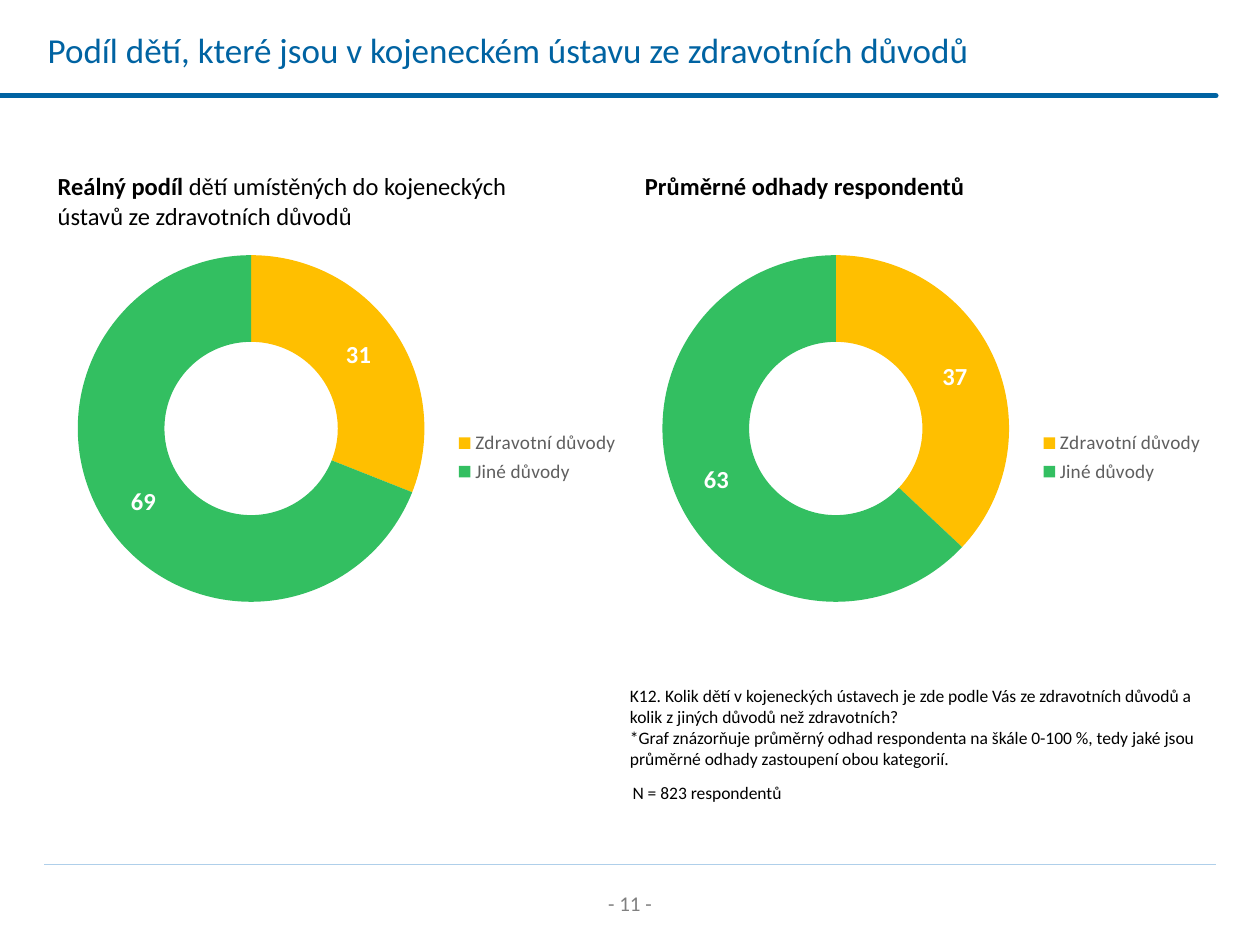
"""Build a slide comparing the real and estimated share of children placed for health reasons."""
from lxml.etree import SubElement
from pptx import Presentation
from pptx.chart.data import CategoryChartData
from pptx.dml.color import RGBColor
from pptx.enum.chart import XL_CHART_TYPE, XL_LEGEND_POSITION
from pptx.enum.shapes import MSO_CONNECTOR
from pptx.enum.text import MSO_ANCHOR, PP_ALIGN
from pptx.oxml import parse_xml
from pptx.oxml.ns import nsdecls, qn
from pptx.util import Inches, Pt

BLUE = "0063A2"
BLACK = "000000"
REASONS = {"Zdravotní důvody": "FFBF00", "Jiné důvody": "33BF61"}


def colour(value):
    return RGBColor.from_string(value)


def manual_layout(left, top, width, height, inner=False):
    target = '<c:layoutTarget val="inner"/>' if inner else ""
    return parse_xml(
        f'<c:layout {nsdecls("c")}><c:manualLayout>{target}'
        '<c:xMode val="edge"/><c:yMode val="edge"/>'
        f'<c:x val="{left}"/><c:y val="{top}"/><c:w val="{width}"/><c:h val="{height}"/>'
        "</c:manualLayout></c:layout>"
    )


class SlideBuilder:
    def __init__(self, page, family="Calibri"):
        self.page = page
        self.family = family

    def style(self, font, size, ink, bold=False):
        font.name = self.family
        font.size = Pt(size)
        font.bold = bold
        font.color.rgb = colour(ink)

    def line(self, left, right, top, ink, weight, cap="flat"):
        rule = self.page.shapes.add_connector(
            MSO_CONNECTOR.STRAIGHT, Inches(left), Inches(top), Inches(right), Inches(top)
        )
        rule.line.color.rgb = colour(ink)
        rule.line.width = Pt(weight)
        properties = rule.line._get_or_add_ln()
        properties.set("cap", cap)
        SubElement(properties.getparent(), qn("a:effectLst"))

    def text(self, bounds, paragraphs, size, ink=BLACK, inset=0.1,
             align=PP_ALIGN.LEFT, anchor=MSO_ANCHOR.TOP):
        box = self.page.shapes.add_textbox(*map(Inches, bounds))
        frame = box.text_frame
        frame.word_wrap = True
        frame.margin_left = Inches(inset)
        frame.vertical_anchor = anchor
        for index, runs in enumerate(paragraphs):
            para = frame.add_paragraph() if index else frame.paragraphs[0]
            para.alignment = align
            for words, bold in runs:
                span = para.add_run()
                span.text = words
                self.style(span.font, size, ink, bold)

    def doughnut(self, bounds, values):
        data = CategoryChartData(number_format="#,##0")
        data.categories = list(REASONS)
        data.add_series("Podíl", values)
        chart = self.page.shapes.add_chart(
            XL_CHART_TYPE.DOUGHNUT, *map(Inches, bounds), data
        ).chart
        self.style(chart.font, 18, BLACK)
        chart.has_title = False
        chart.has_legend = True
        legend = chart.legend
        legend.position = XL_LEGEND_POSITION.RIGHT
        legend.include_in_layout = False
        self.style(legend.font, 11, "5F5F5F")
        legend._element.find(qn("c:legendPos")).addnext(manual_layout(0.66, 0.14, 0.34, 0.58))

        plot_area = chart._chartSpace.chart.plotArea
        for layout in plot_area.findall(qn("c:layout")):
            plot_area.remove(layout)
        plot_area.insert(0, manual_layout(0.055, 0.099, 0.591, 0.688, inner=True))

        chart.plots[0].vary_by_categories = True
        series = chart.plots[0].series[0]
        for index, ink in enumerate(REASONS.values()):
            fill = series.points[index].format.fill
            fill.solid()
            fill.fore_color.rgb = colour(ink)
        labels = series.data_labels
        labels.show_value = True
        labels.number_format = "#,##0"
        labels.number_format_is_linked = False
        self.style(labels.font, 14, "FFFFFF", True)


def main():
    deck = Presentation()
    deck.slide_width, deck.slide_height = Inches(10), Inches(7.5)
    slide = SlideBuilder(deck.slides.add_slide(deck.slide_layouts[6]))

    slide.line(0.35, 9.65, 6.86, "AFCFEA", 0.5)
    slide.text((4.37, 7.02, 1.26, 0.3), [[("- 11 -", False)]], 12, "808080",
               align=PP_ALIGN.CENTER)
    slide.line(0, 9.65, 0.76, BLUE, 3, cap="rnd")
    slide.text((0.28, 0, 8.92, 0.79),
               [[("Podíl dětí, které jsou v kojeneckém ústavu ze zdravotních důvodů", False)]],
               20, BLUE, anchor=MSO_ANCHOR.MIDDLE)

    slide.text((5, 5.39, 4.66, 0.77), [
        [("K12. Kolik dětí v kojeneckých ústavech je zde podle Vás ze zdravotních důvodů "
          "a kolik z jiných důvodů než zdravotních?", False)],
        [("*Graf znázorňuje průměrný odhad respondenta na škále 0-100 %, tedy jaké jsou "
          "průměrné odhady zastoupení obou kategorií.", False)],
    ], 10, inset=0)
    slide.text((5.02, 6.16, 3.51, 0.27), [[("N = 823 respondentů", False)]], 10, inset=0)

    panels = [
        (5, 5.02, 0.34, (37, 63), [("Průměrné odhady respondentů", True)]),
        (0.36, 0.36, 0.57, (31, 69), [
            ("Reálný podíl ", True),
            ("dětí umístěných do kojeneckých ústavů ze zdravotních důvodů", False),
        ]),
    ]
    for chart_left, heading_left, heading_height, values, heading in panels:
        slide.doughnut((chart_left, 1.63, 4.66, 4), values)
        slide.text((heading_left, 1.31, 4.13, heading_height), [heading], 14)

    deck.save("out.pptx")


if __name__ == "__main__":
    main()
